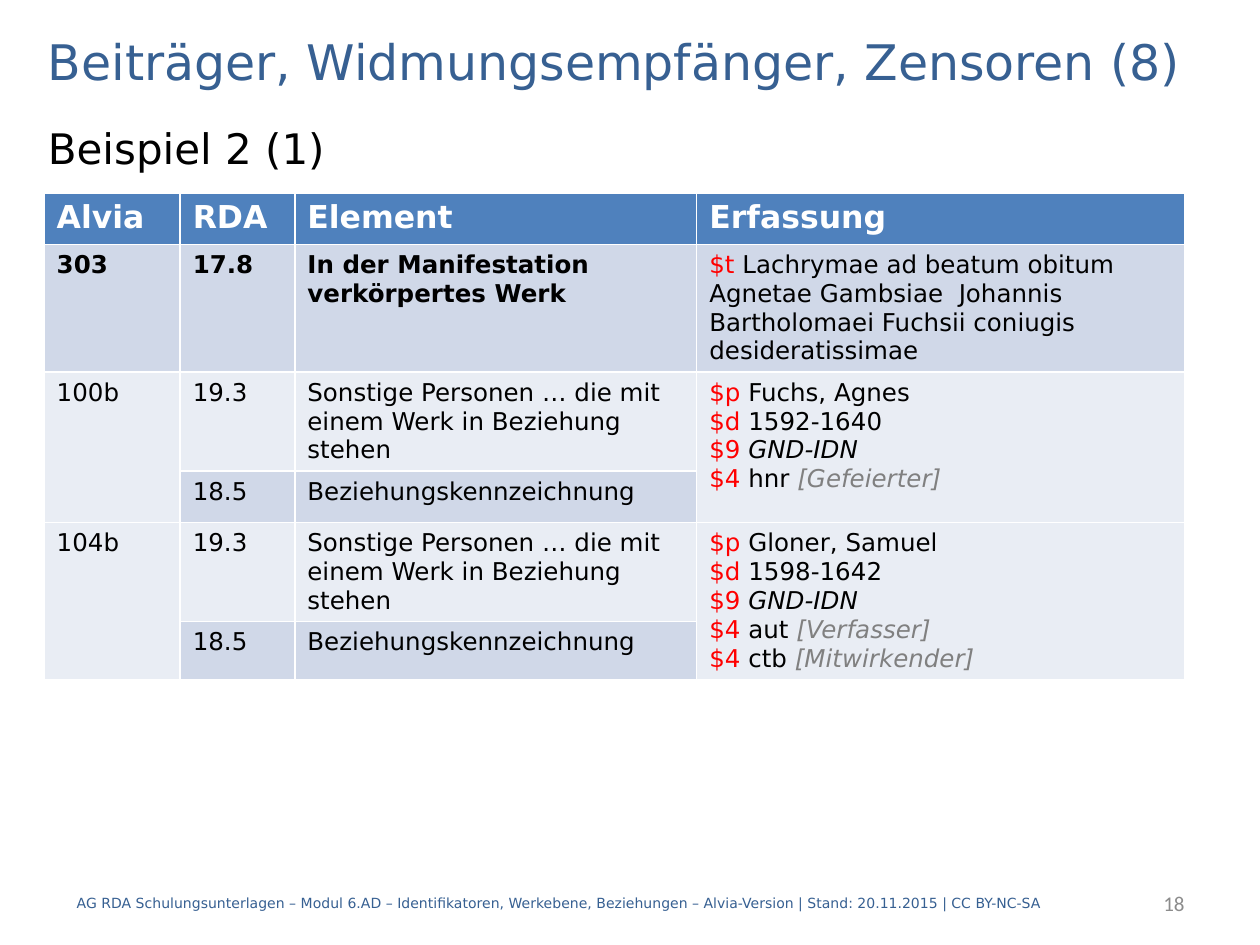
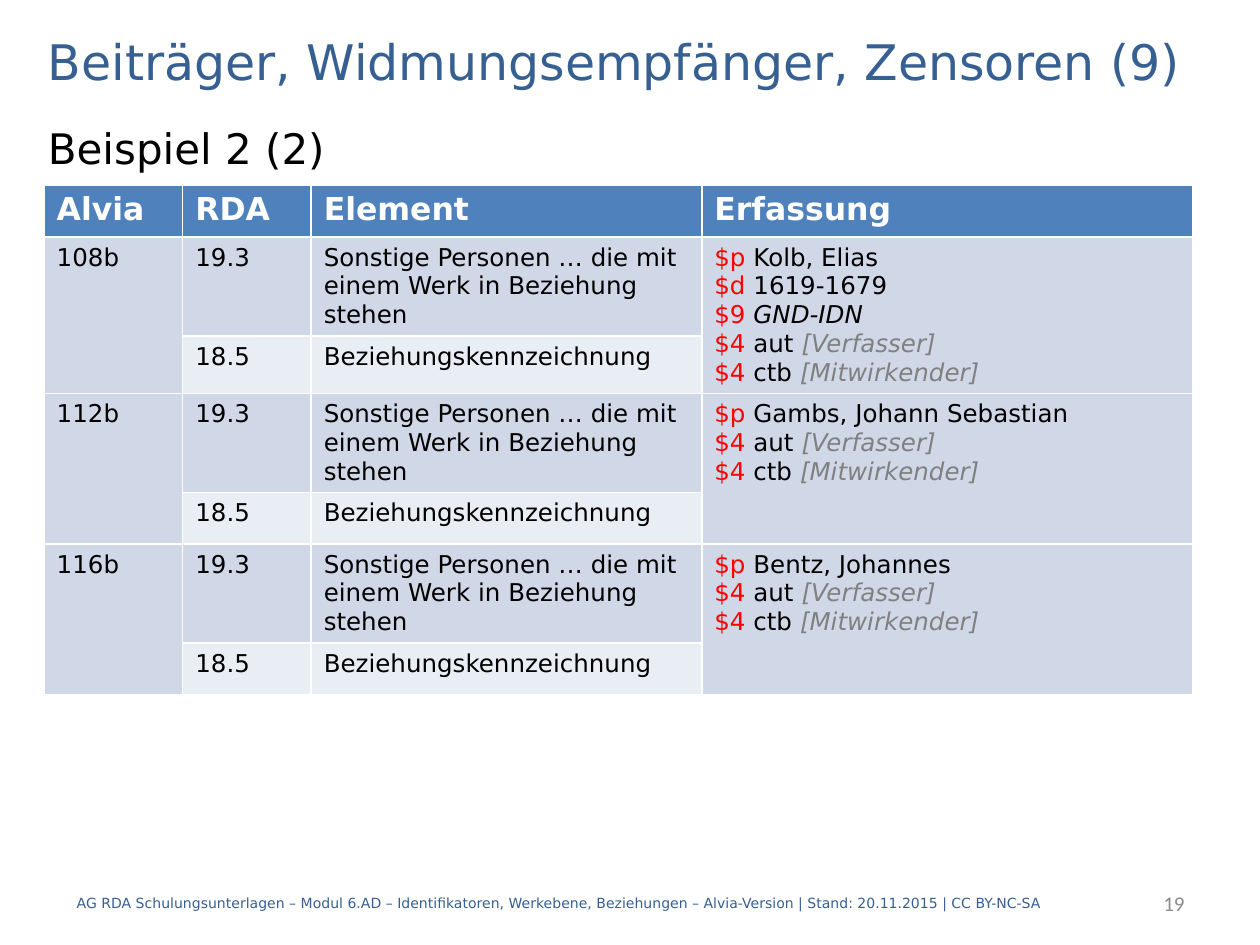
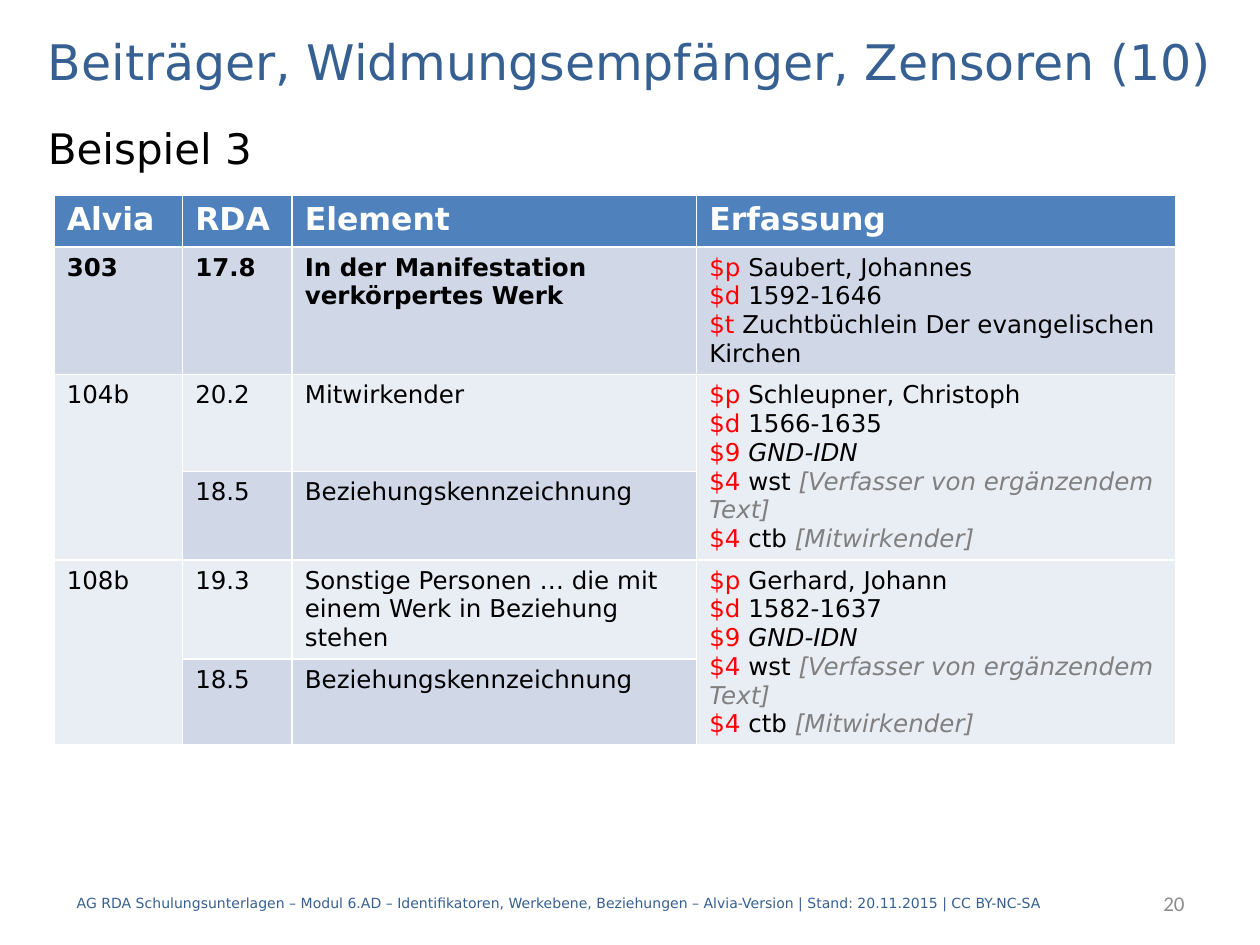
"""Builds three slides of cataloguing examples for contributors, dedicatees and censors."""
import pptx
import pptx.dml.color
import pptx.enum.text
import pptx.util
from pptx.util import Inches

COLORS = {
    "title": "376092", "text": "000000", "code": "FF0000", "note": "808080",
    "number": "8C8C8C", "header": "4F81BD", "header_text": "FFFFFF",
    "dark_band": "D0D8E8", "light_band": "E9EDF4",
}
FONT = "DejaVu Sans"
ROW_HEIGHT = 0.41
TITLE = "Beiträger, Widmungsempfänger, Zensoren ({})"
FOOTER = ("AG RDA Schulungsunterlagen – Modul 6.AD – Identifikatoren, Werkebene, "
          "Beziehungen – Alvia-Version | Stand: 20.11.2015 | CC BY-NC-SA")
HEADINGS = ["Alvia", "RDA", "Element", "Erfassung"]

WORK = [("17.8", "In der Manifestation verkörpertes Werk")]
RELATION = ("18.5", "Beziehungskennzeichnung")
OTHER_PERSON = [("19.3", "Sonstige Personen … die mit einem Werk in Beziehung stehen"), RELATION]
CONTRIBUTOR = [("20.2", "Mitwirkender"), RELATION]
GND = "$9 |GND-IDN"
AUTHOR = "$4 aut |[Verfasser]"
SUPPLEMENT = "$4 wst |[Verfasser von ergänzendem Text]"
CONTRIBUTES = "$4 ctb |[Mitwirkender]"

SLIDES = [
    {
        "part": 8, "page": 18, "example": "Beispiel 2 (1)",
        "place": (0.35, 1.53), "columns": [1.08, 0.91, 3.19, 3.87], "tall_rows": {},
        "fields": [
            ("303", WORK, ["$t Lachrymae ad beatum obitum  Agnetae Gambsiae  Johannis "
                           "Bartholomaei Fuchsii coniugis desideratissimae"]),
            ("100b", OTHER_PERSON, ["$p Fuchs, Agnes", "$d 1592-1640", GND,
                                    "$4 hnr |[Gefeierter]"]),
            ("104b", OTHER_PERSON, ["$p Gloner, Samuel", "$d 1598-1642", GND,
                                    AUTHOR, CONTRIBUTES]),
        ],
    },
    {
        "part": 9, "page": 19, "example": "Beispiel 2 (2)",
        "place": (0.35, 1.47), "columns": [1.1, 1.02, 3.1, 3.9], "tall_rows": {},
        "fields": [
            ("108b", OTHER_PERSON, ["$p Kolb, Elias", "$d 1619-1679", GND,
                                    AUTHOR, CONTRIBUTES]),
            ("112b", OTHER_PERSON, ["$p Gambs, Johann Sebastian", AUTHOR, CONTRIBUTES]),
            ("116b", OTHER_PERSON, ["$p Bentz, Johannes", AUTHOR, CONTRIBUTES]),
        ],
    },
    {
        "part": 10, "page": 20, "example": "Beispiel 3",
        "place": (0.43, 1.55), "columns": [1.02, 0.87, 3.21, 3.8], "tall_rows": {2: 0.77},
        "fields": [
            ("303", WORK, ["$p Saubert, Johannes", "$d 1592-1646",
                           "$t Zuchtbüchlein Der evangelischen Kirchen"]),
            ("104b", CONTRIBUTOR, ["$p Schleupner, Christoph", "$d 1566-1635", GND,
                                   SUPPLEMENT, CONTRIBUTES]),
            ("108b", OTHER_PERSON, ["$p Gerhard, Johann", "$d 1582-1637", GND,
                                    SUPPLEMENT, CONTRIBUTES]),
        ],
    },
]


def rgb(name):
    return pptx.dml.color.RGBColor.from_string(COLORS[name])


def style(paragraph, size, color, bold=False, font=FONT):
    paragraph.font.name = font
    paragraph.font.size = pptx.util.Pt(size)
    paragraph.font.bold = bold
    paragraph.font.color.rgb = rgb(color)


def place(shape, left, top, width, height):
    shape.left, shape.top = Inches(left), Inches(top)
    shape.width, shape.height = Inches(width), Inches(height)


def write(shape, text, size, color, align="LEFT", anchor="MIDDLE", font=FONT):
    frame = shape.text_frame
    frame.word_wrap = True
    frame.auto_size = pptx.enum.text.MSO_AUTO_SIZE.NONE
    frame.vertical_anchor = pptx.enum.text.MSO_ANCHOR[anchor]
    paragraph = frame.paragraphs[0]
    paragraph.text = text
    paragraph.alignment = pptx.enum.text.PP_ALIGN[align]
    style(paragraph, size, color, font=font)
    return paragraph


def add_frame(slide, content):
    title, example = slide.placeholders
    place(title, 0.28, 0.2, 9.45, 0.56)
    write(title, TITLE.format(content["part"]), 28, "title")
    place(example, 0.28, 0.92, 9.53, 5.98)
    properties = write(example, content["example"], 24, "text", anchor="TOP")._p.get_or_add_pPr()
    properties.set("marL", str(Inches(0.38)))
    properties.set("indent", str(-Inches(0.38)))
    properties.insert_element_before(
        properties.makeelement(pptx.oxml.ns.qn("a:buNone"), {}), "a:tabLst", "a:defRPr", "a:extLst")

    footer = slide.shapes.add_textbox(*map(Inches, (0.51, 6.97, 8.35, 0.4)))
    write(footer, FOOTER, 8, "title")
    number = slide.shapes.add_textbox(*map(Inches, (7.91, 6.97, 1.59, 0.4)))
    write(number, str(content["page"]), 12, "number", "RIGHT", font="Calibri")


def fill_cell(cell, text, band, size=14, color="text", bold=False):
    cell.fill.solid()
    cell.fill.fore_color.rgb = rgb(band)
    paragraph = cell.text_frame.paragraphs[0]
    paragraph.text = text
    style(paragraph, size, color, bold)


def write_entries(cell, entries):
    for index, entry in enumerate(entries):
        frame = cell.text_frame
        paragraph = frame.add_paragraph() if index else frame.paragraphs[0]
        style(paragraph, 14, "text")
        plain, _, remark = entry.partition("|")
        for text, color in ((plain[:2], "code"), (plain[2:], "text"),
                            (remark, "note" if remark.startswith("[") else "text")):
            if text:
                run = paragraph.add_run()
                run.text = text
                run.font.color.rgb = rgb(color)
                run.font.italic = text == remark


def add_fields(slide, content):
    columns, fields = content["columns"], content["fields"]
    row_count = 1 + sum(len(elements) for _, elements, _ in fields)
    heights = [content["tall_rows"].get(row, ROW_HEIGHT) for row in range(row_count)]
    table = slide.shapes.add_table(
        row_count, len(columns), *map(Inches, (*content["place"], sum(columns), sum(heights)))).table
    for column, width in zip(table.columns, columns):
        column.width = Inches(width)
    for row, height in zip(table.rows, heights):
        row.height = Inches(height)
    for column, heading in enumerate(HEADINGS):
        fill_cell(table.cell(0, column), heading, "header", 18, "header_text", True)

    first = 1
    for field, elements, entries in fields:
        bold = elements is WORK
        for row, (rule, element) in enumerate(elements, first):
            band = "dark_band" if row % 2 else "light_band"
            for column, text in enumerate((field if row == first else "", rule, element, "")):
                fill_cell(table.cell(row, column), text, band, bold=bold)
        write_entries(table.cell(first, 3), entries)
        last = first + len(elements) - 1
        if last > first:
            for column in (0, 3):
                table.cell(first, column).merge(table.cell(last, column))
        first = last + 1


def main():
    deck = pptx.Presentation()
    deck.slide_width, deck.slide_height = Inches(10), Inches(7.5)
    for content in SLIDES:
        slide = deck.slides.add_slide(deck.slide_layouts[1])
        add_frame(slide, content)
        add_fields(slide, content)
    deck.save("out.pptx")


if __name__ == "__main__":
    main()
